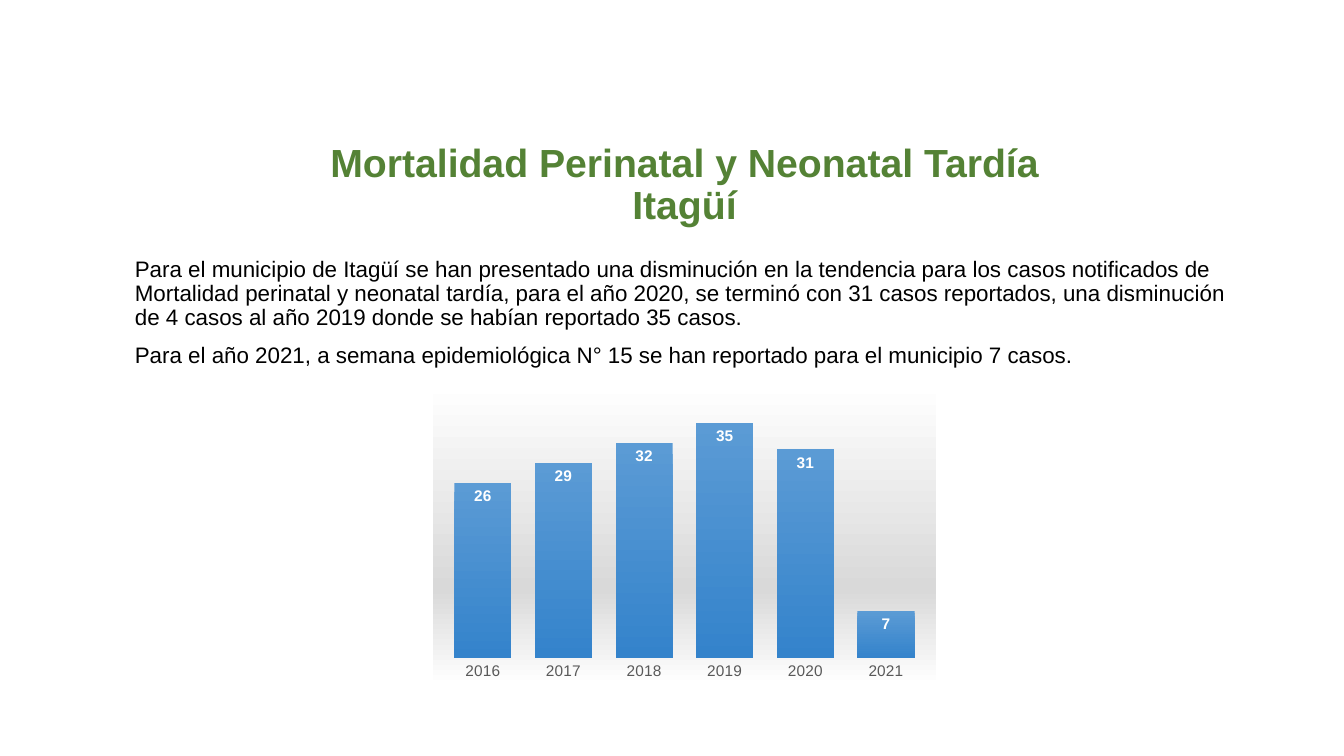
import pptx
import pptx.chart.data
import pptx.dml.color
import pptx.enum.chart
import pptx.enum.text
import pptx.oxml
import pptx.oxml.ns
import pptx.util

Cm = pptx.util.Cm
Pt = pptx.util.Pt

FONT = "Arial"
COLOURS = {
    "title": "548235",
    "text": "000000",
    "axis": "595959",
    "label": "FFFFFF",
    "bar_top": "5B9BD5",
    "bar_bottom": "3483CB",
    "panel_edge": "FFFFFF",
    "panel_middle": "D9D9D9",
}
TITLE = "Mortalidad Perinatal y Neonatal Tardía\vItagüí"
SUMMARY = [
    "Para el municipio de Itagüí se han presentado una disminución en la tendencia "
    "para los casos notificados de Mortalidad perinatal y neonatal tardía, para el "
    "año 2020, se terminó con 31 casos reportados, una disminución de 4 casos al año "
    "2019 donde se habían reportado 35 casos.",
    "Para el año 2021, a semana epidemiológica N° 15 se han reportado para el "
    "municipio 7 casos.",
]
CASES = {"2016": 26, "2017": 29, "2018": 32, "2019": 35, "2020": 31, "2021": 7}


def format_font(font, size, colour, bold=False):
    font.name = FONT
    font.size = Pt(size)
    font.bold = bold
    font.color.rgb = pptx.dml.color.RGBColor.from_string(COLOURS[colour])


def write_text(frame, paragraphs, size, colour, bold=False, gap=0,
               align=pptx.enum.text.PP_ALIGN.LEFT,
               anchor=pptx.enum.text.MSO_ANCHOR.TOP):
    frame.word_wrap = True
    frame.auto_size = pptx.enum.text.MSO_AUTO_SIZE.NONE
    frame.vertical_anchor = anchor
    for index, text in enumerate(paragraphs):
        para = frame.add_paragraph() if index else frame.paragraphs[0]
        para.text = text
        para.alignment = align
        para.line_spacing = 0.9
        para.space_before = Pt(gap if index else 0)
        for span in para.runs:
            format_font(span.font, size, colour, bold)


def add_title(page):
    title = page.shapes.title
    title.left, title.top = Cm(3.94), Cm(3.33)
    title.width, title.height = Cm(26.62), Cm(2.54)
    write_text(title.text_frame, [TITLE], 28, "title", bold=True,
               align=pptx.enum.text.PP_ALIGN.CENTER,
               anchor=pptx.enum.text.MSO_ANCHOR.BOTTOM)


def add_summary(page):
    box = page.shapes.add_textbox(Cm(3.15), Cm(6.38), Cm(28.17), Cm(11.43))
    write_text(box.text_frame, SUMMARY, 16, "text", gap=10)


def vertical_gradient(stops):
    marks = "".join(
        f'<a:gs pos="{percent * 1000}"><a:srgbClr val="{COLOURS[colour]}"/></a:gs>'
        for percent, colour in stops)
    return pptx.oxml.parse_xml(
        f'<a:gradFill {pptx.oxml.ns.nsdecls("a")} rotWithShape="1">'
        f'<a:gsLst>{marks}</a:gsLst><a:lin ang="5400000" scaled="0"/></a:gradFill>')


def fill_panel(chart):
    panel = pptx.oxml.parse_xml(
        f'<c:spPr {pptx.oxml.ns.nsdecls("c", "a")}><a:ln><a:noFill/></a:ln></c:spPr>')
    panel.insert(0, vertical_gradient(
        [(0, "panel_edge"), (68, "panel_middle"), (100, "panel_edge")]))
    chart._chartSpace.chart.addnext(panel)


def place_plot(chart, left, top, width, height):
    values = {"x": left, "y": top, "w": width, "h": height}
    sizes = "".join(f'<c:{name} val="{value}"/>' for name, value in values.items())
    layout = pptx.oxml.parse_xml(
        f'<c:layout {pptx.oxml.ns.nsdecls("c")}><c:manualLayout>'
        '<c:layoutTarget val="inner"/><c:xMode val="edge"/><c:yMode val="edge"/>'
        f'{sizes}</c:manualLayout></c:layout>')
    area = chart._chartSpace.chart.plotArea
    for old in area.findall(pptx.oxml.ns.qn("c:layout")):
        area.remove(old)
    area.insert(0, layout)


def add_cases_chart(page):
    data = pptx.chart.data.CategoryChartData()
    data.categories = list(CASES)
    data.add_series("Series 1", list(CASES.values()))
    chart = page.shapes.add_chart(
        pptx.enum.chart.XL_CHART_TYPE.COLUMN_CLUSTERED,
        Cm(10.9), Cm(9.65), Cm(12.7), Cm(7.62), data).chart
    chart.has_legend = False
    chart.has_title = False
    format_font(chart.font, 11, "text")
    fill_panel(chart)
    place_plot(chart, 0.02, 0.02, 0.96, 0.89)

    years = chart.category_axis
    years.major_tick_mark = pptx.enum.chart.XL_TICK_MARK.NONE
    years.format.line.fill.background()
    format_font(years.tick_labels.font, 11, "axis")
    counts = chart.value_axis
    counts.minimum_scale = 0
    counts.maximum_scale = 40
    counts.has_major_gridlines = False
    counts.visible = False

    plot = chart.plots[0]
    plot.gap_width = 41
    plot.vary_by_categories = False
    series = plot.series[0]
    series.format.line.fill.background()
    series._element.get_or_add_spPr().insert(
        0, vertical_gradient([(0, "bar_top"), (100, "bar_bottom")]))
    labels = series.data_labels
    labels.show_value = True
    labels.position = pptx.enum.chart.XL_LABEL_POSITION.INSIDE_END
    format_font(labels.font, 11, "label", bold=True)


def main():
    deck = pptx.Presentation()
    deck.slide_width, deck.slide_height = Cm(33.87), Cm(19.05)
    page = deck.slides.add_slide(deck.slide_layouts[5])
    add_title(page)
    add_summary(page)
    add_cases_chart(page)
    deck.save("out.pptx")


if __name__ == "__main__":
    main()
